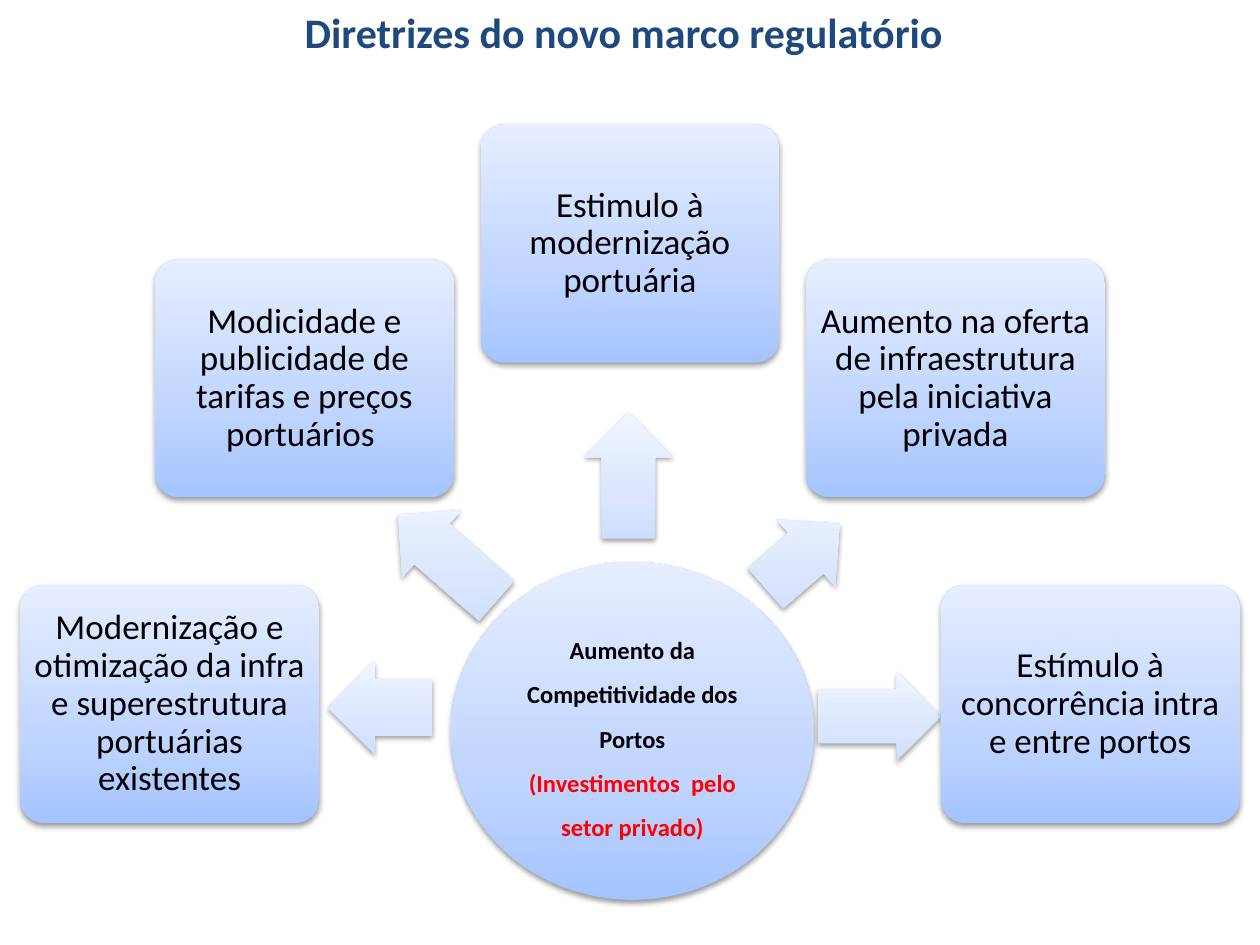
from math import cos, radians, sin

from lxml import etree
from pptx import Presentation
from pptx.dml.color import RGBColor
from pptx.enum.shapes import MSO_SHAPE
from pptx.enum.text import MSO_ANCHOR, PP_ALIGN
from pptx.oxml import parse_xml
from pptx.oxml.ns import nsdecls
from pptx.util import Cm, Pt

ELLIPSE, ROUNDED, ARROW = MSO_SHAPE.OVAL, MSO_SHAPE.ROUNDED_RECTANGLE, MSO_SHAPE.RIGHT_ARROW
CENTER, MIDDLE = PP_ALIGN.CENTER, MSO_ANCHOR.MIDDLE

FONT = "Calibri"
BLACK = RGBColor(0x00, 0x00, 0x00)
RED = RGBColor(0xFF, 0x00, 0x00)
NAVY = RGBColor(0x1F, 0x49, 0x7D)
# Gradient colours from bottom to top
BLUES = [RGBColor(0xA4, 0xC4, 0xFF), RGBColor(0xBF, 0xD4, 0xFF), RGBColor(0xE6, 0xEE, 0xFF)]
PALE_BLUES = [RGBColor(0xCD, 0xDD, 0xFE), RGBColor(0xDB, 0xE6, 0xFE), RGBColor(0xF0, 0xF5, 0xFF)]
STOPS = [0, 35, 100]

# Boxes stand on a half circle (cm)
ARC_X, ARC_Y, ARC_RADIUS = 12.7, 14.19, 9.28
BOX_WIDTH, BOX_HEIGHT = 6.02, 4.8

# Box text, then its arrow: centre x, centre y, length, breadth (cm), rotation
GUIDELINES = [
    ("Modernização e otimização da infra e superestrutura portuárias existentes",
     (7.66, 14.26, 2.11, 1.9, 180)),
    ("Modicidade e publicidade de tarifas e preços portuários ",
     (9.02, 11.24, 2.64, 1.8, 221.2)),
    ("Estimulo à modernização portuária", (12.67, 9.59, 2.54, 1.8, 270)),
    ("Aumento na oferta de infraestrutura pela iniciativa privada",
     (16.18, 11.21, 1.98, 1.8, 319)),
    ("Estímulo à concorrência intra e entre portos", (17.73, 14.44, 2.49, 1.8, 0)),
]
HUB_LINES = [
    ("Aumento da", BLACK),
    ("Competitividade dos Portos", BLACK),
    ("(Investimentos  pelo setor privado)", RED),
]


def add_glossy_shape(slide, kind, box, colors):
    """Add a borderless shape with an upright gradient and a soft shadow."""
    shape = slide.shapes.add_shape(kind, *(Cm(length) for length in box))
    shape.line.fill.background()
    stops = "".join(
        f'<a:gs pos="{stop * 1000}"><a:srgbClr val="{color}"/></a:gs>'
        for stop, color in zip(STOPS, colors))
    gradient = parse_xml(
        f'<a:gradFill {nsdecls("a")} rotWithShape="0"><a:gsLst>{stops}</a:gsLst>'
        '<a:lin ang="16200000" scaled="0"/></a:gradFill>')
    shadow = parse_xml(
        f'<a:effectLst {nsdecls("a")}><a:outerShdw blurRad="40000" dist="20000" dir="5400000"'
        ' rotWithShape="0"><a:srgbClr val="000000"><a:alpha val="38000"/></a:srgbClr>'
        '</a:outerShdw></a:effectLst>')
    properties = shape.element.spPr
    properties.insert(2, gradient)
    etree.SubElement(properties, shadow.tag).extend(shadow)
    return shape


def write_lines(shape, lines, size, bold, spacing, inset):
    """Fill a shape with centred paragraphs of (text, colour)."""
    frame = shape.text_frame
    frame.word_wrap = True
    frame.vertical_anchor = MIDDLE
    frame.margin_left = frame.margin_right = Cm(inset)
    frame.margin_top = frame.margin_bottom = Cm(inset)
    for index, (text, color) in enumerate(lines):
        paragraph = frame.add_paragraph() if index else frame.paragraphs[0]
        paragraph.text = text
        paragraph.alignment = CENTER
        paragraph.line_spacing = spacing
        paragraph.font.name = FONT
        paragraph.font.size = Pt(size)
        paragraph.font.bold = bold
        paragraph.font.color.rgb = color


def add_title(slide, box):
    title = slide.shapes.add_textbox(*(Cm(length) for length in box))
    title.text_frame.word_wrap = False
    paragraph = title.text_frame.paragraphs[0]
    paragraph.text = "Diretrizes do novo marco regulatório"
    paragraph.font.name = FONT
    paragraph.font.size = Pt(24)
    paragraph.font.bold = True
    paragraph.font.color.rgb = NAVY


def add_hub(slide, box):
    hub = add_glossy_shape(slide, ELLIPSE, box, BLUES)
    write_lines(hub, HUB_LINES, 14, True, 1.5, 0.03)


def add_arrow(slide, center_x, center_y, length, breadth, rotation):
    box = (center_x - length / 2, center_y - breadth / 2, length, breadth)
    arrow = add_glossy_shape(slide, ARROW, box, PALE_BLUES)
    arrow.adjustments[0] = 0.6
    arrow.adjustments[1] = 0.5
    arrow.rotation = rotation


def add_guideline(slide, box, text):
    card = add_glossy_shape(slide, ROUNDED, box, BLUES)
    card.adjustments[0] = 0.1
    write_lines(card, [(text, BLACK)], 20, False, 0.9, 0.1)


def add_guidelines(slide):
    """Spread the boxes from left to right over the half circle."""
    step = 180 / (len(GUIDELINES) - 1)
    for index, (text, arrow) in enumerate(GUIDELINES):
        angle = radians(180 - index * step)
        left = ARC_X + ARC_RADIUS * cos(angle) - BOX_WIDTH / 2
        top = ARC_Y - ARC_RADIUS * sin(angle) - BOX_HEIGHT / 2
        add_arrow(slide, *arrow)
        add_guideline(slide, (left, top, BOX_WIDTH, BOX_HEIGHT), text)


def main():
    presentation = Presentation()
    presentation.slide_width = Cm(25.4)
    presentation.slide_height = Cm(19.05)
    slide = presentation.slides.add_slide(presentation.slide_layouts[6])
    add_hub(slide, (9.09, 11.33, 7.32, 6.81))
    add_guidelines(slide)
    add_title(slide, (5.89, 0, 13.49, 1.27))
    presentation.save("out.pptx")


if __name__ == "__main__":
    main()
